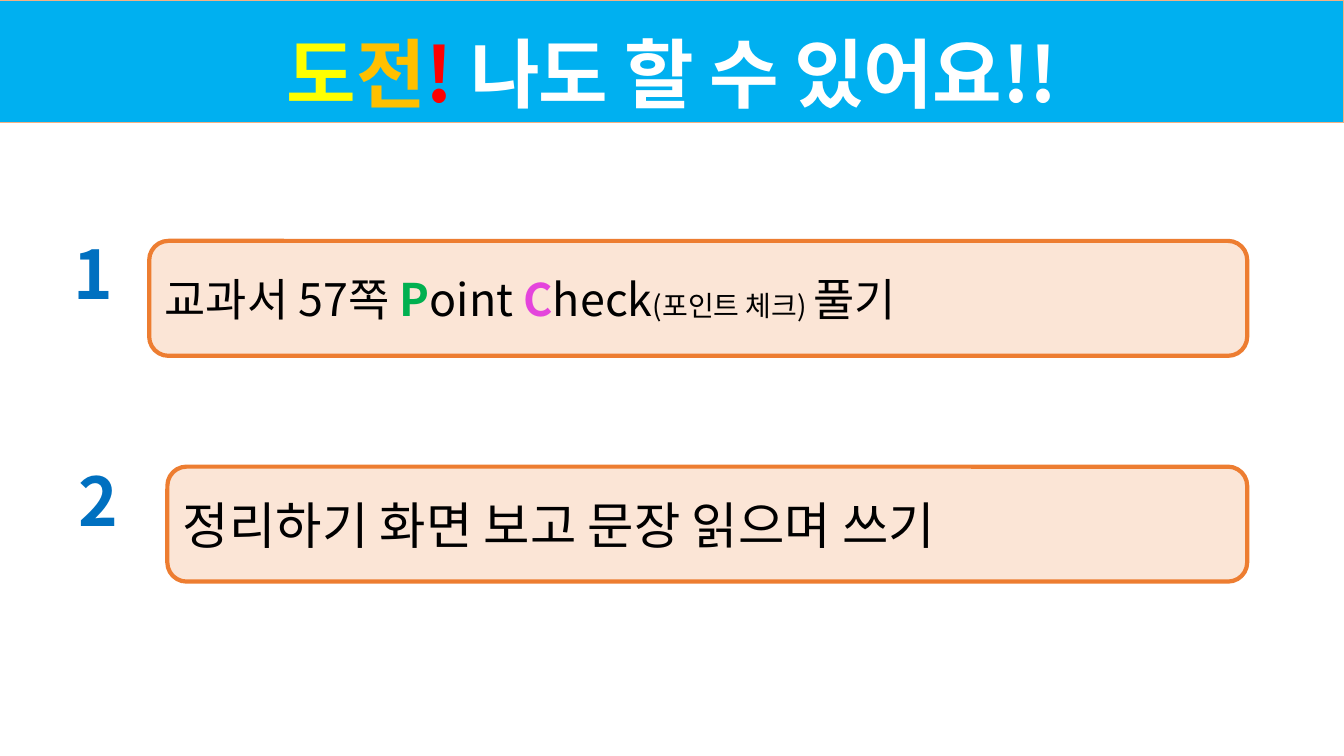
from pptx import Presentation
from pptx.dml.color import RGBColor
from pptx.enum import shapes, text
from pptx.oxml.ns import qn
from pptx.util import Inches, Pt

FONT = "Noto Sans CJK KR"
COLORS = {
    "sky": "00B0F0", "tan": "F4B183", "peach": "FBE5D6", "orange": "ED7D31",
    "blue": "0070C0", "yellow": "FFFF00", "gold": "FFC000", "red": "FF0000",
    "white": "FFFFFF", "black": "000000", "green": "00B050", "pink": "E444DC",
}


def add_box(kind, place, fill, line):
    shape = slide.shapes.add_shape(kind, *map(Inches, place))
    shape.shadow.inherit = False
    shape.fill.solid()
    shape.fill.fore_color.rgb = RGBColor.from_string(COLORS[fill])
    shape.line.color.rgb = RGBColor.from_string(COLORS[line])
    return shape


def write_runs(paragraph, runs):
    """Add runs given as (text, size, colour, bold)."""
    for words, size, color, bold in runs:
        run = paragraph.add_run()
        run.text = words
        formats = {"size": Pt(size), "bold": bold, "name": FONT}
        for name, value in formats.items():
            setattr(run.font, name, value)
        run.font.color.rgb = RGBColor.from_string(COLORS[color])
        east_asian = run.font._element.makeelement(qn("a:ea"), {"typeface": FONT})
        run.font._element.find(qn("a:latin")).addnext(east_asian)


presentation = Presentation()
presentation.slide_width = Inches(13.33)
presentation.slide_height = Inches(7.5)
slide = presentation.slides.add_slide(presentation.slide_layouts[6])

# Title band
title = add_box(shapes.MSO_SHAPE.RECTANGLE, (0, 0, 13.33, 1.22), "sky", "tan")
title.text_frame.vertical_anchor = text.MSO_ANCHOR.BOTTOM
title.text_frame.word_wrap = True
paragraph = title.text_frame.paragraphs[0]
paragraph.alignment = text.PP_ALIGN.CENTER
paragraph.line_spacing = 0.85
write_runs(paragraph, [
    ("도", 54, "yellow", True),
    ("전", 54, "gold", True),
    ("! ", 54, "red", True),
    ("나도 할 수 있어요!!", 54, "white", True),
])
for run in paragraph.runs:
    run.font._element.set("spc", "-50")

# Numbered tasks: number, number position, box left and top, runs
tasks = [
    ("1", (0.63, 2.26), (1.48, 2.39), [
        ("교과서 57쪽 ", 32, "black", False),
        ("P", 32, "green", True),
        ("oint ", 32, "black", False),
        ("C", 32, "pink", True),
        ("heck", 32, "black", False),
        ("(포인트 체크) ", 20, "black", False),
        ("풀기", 32, "black", False),
    ]),
    ("2", (0.68, 4.51), (1.66, 4.63), [
        ("정리하기 화면 보고 문장 읽으며 쓰기", 36, "black", False),
    ]),
]
TASK_RIGHT = 12.37
for number, number_place, (left, top), runs in tasks:
    task = add_box(shapes.MSO_SHAPE.ROUNDED_RECTANGLE,
                   (left, top, TASK_RIGHT - left, 1.14), "peach", "orange")
    task.line.width = Pt(3)
    task.text_frame.word_wrap = False
    task.text_frame.vertical_anchor = text.MSO_ANCHOR.MIDDLE
    paragraph = task.text_frame.paragraphs[0]
    paragraph.alignment = text.PP_ALIGN.LEFT
    write_runs(paragraph, runs)

    label = slide.shapes.add_textbox(*map(Inches, (*number_place, 0.89, 0.91)))
    label.text_frame.word_wrap = True
    label.text_frame.auto_size = text.MSO_AUTO_SIZE.SHAPE_TO_FIT_TEXT
    write_runs(label.text_frame.paragraphs[0], [(number, 48, "blue", True)])

presentation.save("out.pptx")
